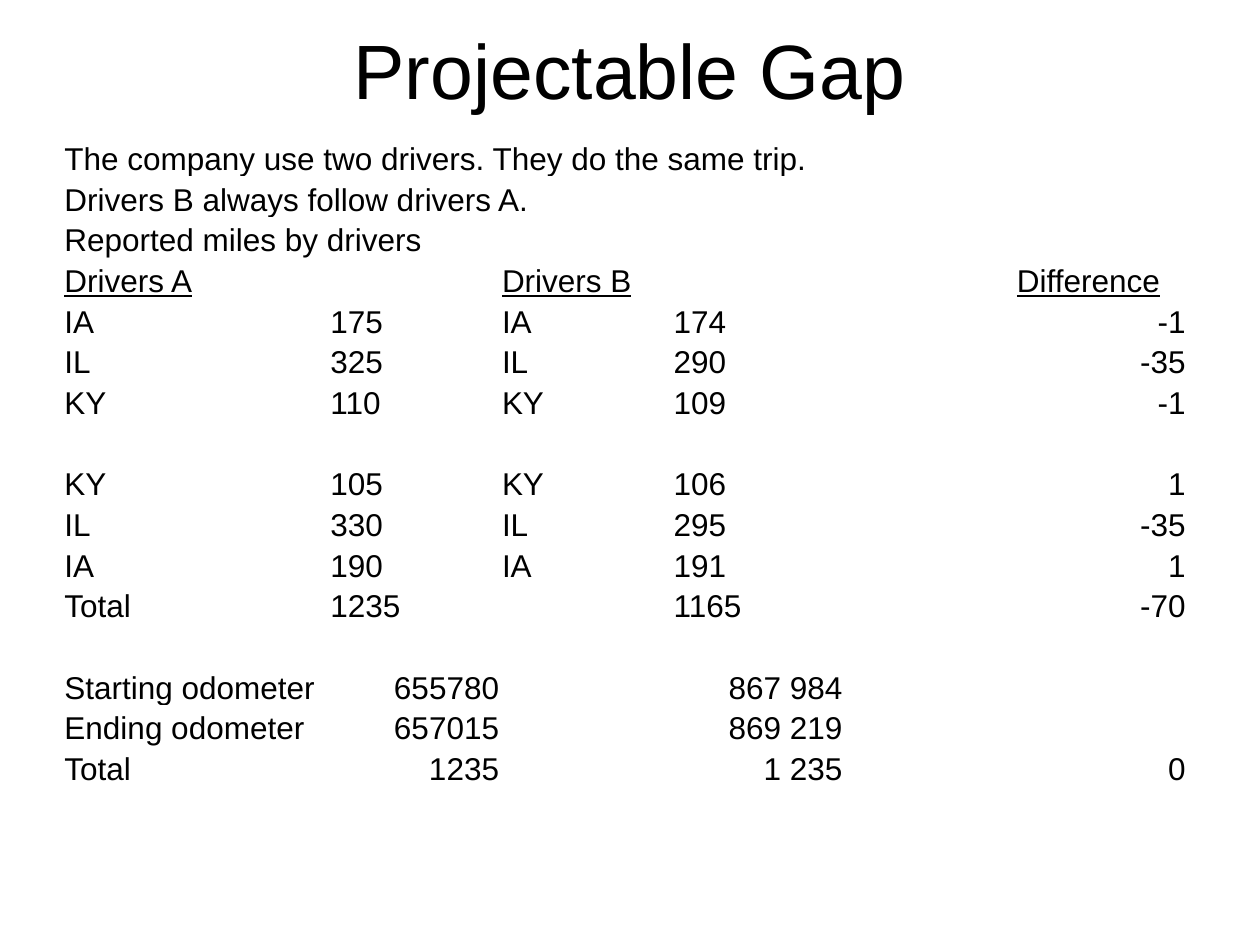
"""Build a slide comparing the miles reported by two groups of drivers."""
from dataclasses import dataclass

from lxml.etree import SubElement
from pptx import Presentation
from pptx.dml.color import RGBColor
from pptx.enum.text import MSO_ANCHOR, PP_ALIGN
from pptx.oxml.ns import qn
from pptx.util import Cm, Pt


@dataclass(frozen=True)
class Theme:
    font: str = "Arial"
    ink: str = "000000"
    paper: str = "FFFFFF"
    title_size: int = 44
    body_size: int = 18
    border: int = 1


ROWS = [
    ["The company use two drivers. They do the same trip."],
    ["Drivers B always follow drivers A."],
    ["Reported miles by drivers"],
    ["Drivers A", "", "Drivers B", "", "", "Difference"],
    ["IA", "175", "IA", "174", "", "-1"],
    ["IL", "325", "IL", "290", "", "-35"],
    ["KY", "110", "KY", "109", "", "-1"],
    [],
    ["KY", "105", "KY", "106", "", "1"],
    ["IL", "330", "IL", "295", "", "-35"],
    ["IA", "190", "IA", "191", "", "1"],
    ["Total", "1235", "", "1165", "", "-70"],
    [],
    ["Starting odometer", "655780", "", "867 984"],
    ["Ending odometer", "657015", "", "869 219"],
    ["Total", "1235", "", "1 235", "", "0"],
]
INTRO_SPANS = [4, 3, 2]
HEADER_ROW = 3
ODOMETER_ROW = 13
COL_WIDTHS = [5.36] + [3.46] * 5
ROW_HEIGHT = 0.82


def write(tf, text, font, size, color, align=PP_ALIGN.LEFT, underline=False):
    p = tf.paragraphs[0]
    p.alignment = align
    r = p.add_run()
    r.text = text
    r.font.name = font
    r.font.size = Pt(size)
    r.font.underline = underline
    r.font.color.rgb = RGBColor.from_string(color)


class SlideBuilder:
    def __init__(self, slide, theme):
        self.s = slide
        self.theme = theme

    def title(self, text, left, top, width, height):
        t = self.theme
        tf = self.s.shapes.add_textbox(Cm(left), Cm(top), Cm(width), Cm(height)).text_frame
        tf.word_wrap = True
        tf.vertical_anchor = MSO_ANCHOR.MIDDLE
        write(tf, text, t.font, t.title_size, t.ink, align=PP_ALIGN.CENTER)

    def style_cell(self, cell):
        t = self.theme
        tc_pr = cell._tc.get_or_add_tcPr()
        for side in ("a:lnL", "a:lnR", "a:lnT", "a:lnB"):
            ln = SubElement(tc_pr, qn(side), w=str(Pt(t.border)))
            fill = SubElement(ln, qn("a:solidFill"))
            SubElement(fill, qn("a:srgbClr"), val=t.paper)
        cell.fill.solid()
        cell.fill.fore_color.rgb = RGBColor.from_string(t.paper)
        cell.margin_left = cell.margin_right = cell.margin_top = Cm(0.03)
        cell.margin_bottom = 0
        cell.vertical_anchor = MSO_ANCHOR.BOTTOM

    def mileage_table(self, rows, left, top):
        t = self.theme
        last = len(COL_WIDTHS) - 1
        table = self.s.shapes.add_table(
            len(rows), len(COL_WIDTHS), Cm(left), Cm(top),
            Cm(sum(COL_WIDTHS)), Cm(ROW_HEIGHT * len(rows))).table
        table.first_row = table.horz_banding = False
        for col, width in zip(table.columns, COL_WIDTHS):
            col.width = Cm(width)
        for i, values in enumerate(rows):
            table.rows[i].height = Cm(ROW_HEIGHT)
            for cell in table.rows[i].cells:
                self.style_cell(cell)
            for j, text in enumerate(values):
                if text:
                    right = (i >= ODOMETER_ROW and j > 0) or (i > HEADER_ROW and j == last)
                    write(table.cell(i, j).text_frame, text, t.font, t.body_size, t.ink,
                          align=PP_ALIGN.RIGHT if right else PP_ALIGN.LEFT,
                          underline=i == HEADER_ROW)
        for i, span in enumerate(INTRO_SPANS):
            table.cell(i, 0).merge(table.cell(i, span - 1))


def main():
    prs = Presentation()
    prs.slide_width, prs.slide_height = Cm(25.4), Cm(19.05)
    s = prs.slides.add_slide(prs.slide_layouts[6])
    builder = SlideBuilder(s, Theme())
    builder.title("Projectable Gap", 1.9, 0.43, 21.6, 1.9)
    builder.mileage_table(ROWS, 1.27, 2.75)
    prs.save("out.pptx")


if __name__ == "__main__":
    main()
